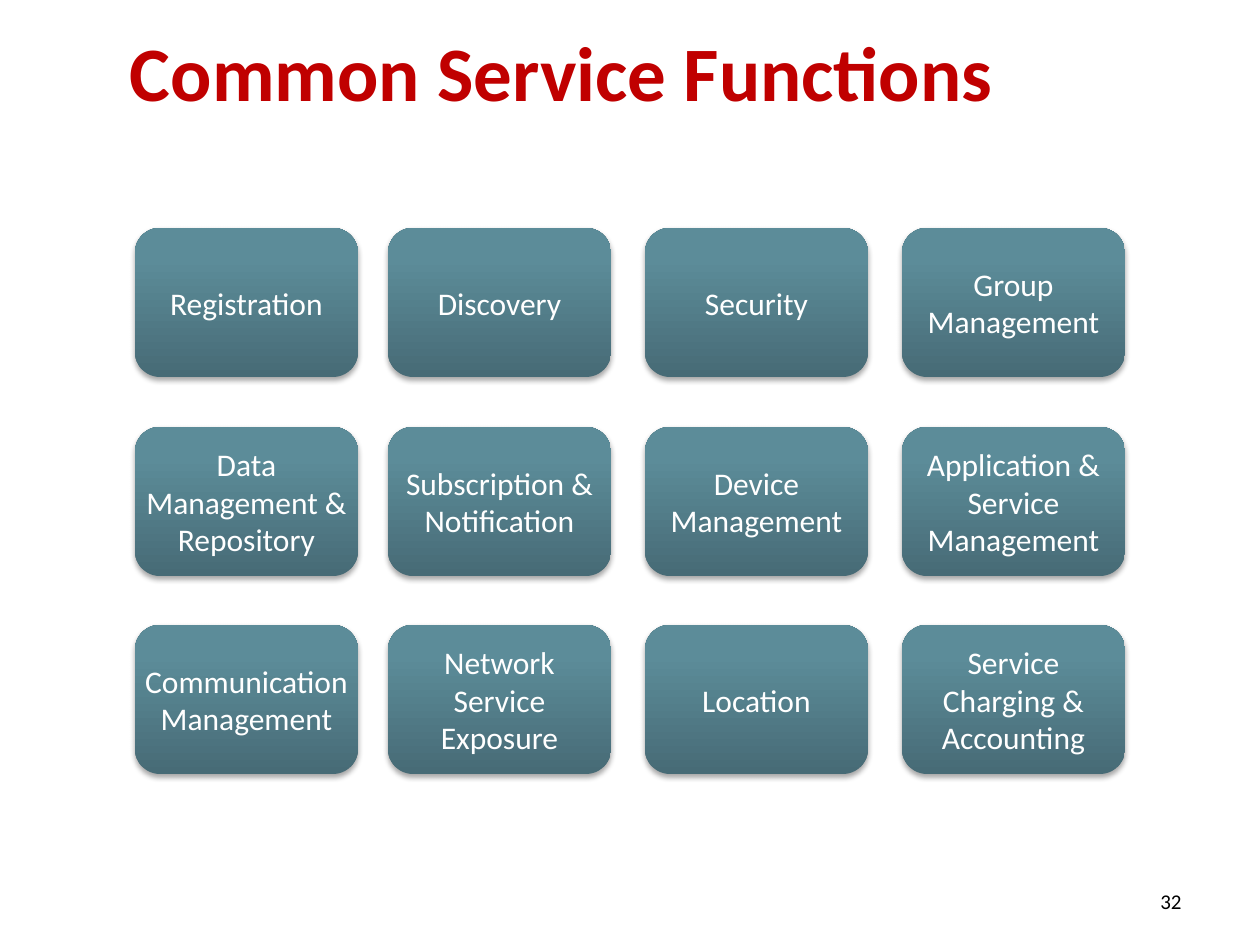
from dataclasses import dataclass

import pptx
import pptx.dml.color
import pptx.enum.shapes
import pptx.enum.text
import pptx.oxml
import pptx.oxml.ns
import pptx.util

EMU_PER_PX = 914400 / 126
ALIGN = pptx.enum.text.PP_ALIGN
ANCHOR = pptx.enum.text.MSO_ANCHOR
DRAWING_NS = pptx.oxml.ns.nsdecls("a")


@dataclass(frozen=True)
class Theme:
    font: str = "Calibri"
    heading: str = "C00000"
    tile_text: str = "FFFFFF"
    number: str = "000000"
    shadow: str = "000000"
    tile_stops: tuple = ((0, "476B76"), (80, "5C8C99"), (100, "5B8D9B"))
    heading_size: int = 44
    tile_size: int = 18
    number_size: int = 12


def px(length):
    return pptx.util.Emu(round(length * EMU_PER_PX))


class Deck:
    def __init__(self, theme, width, height):
        self.theme = theme
        self.presentation = pptx.Presentation()
        self.presentation.slide_width = px(width)
        self.presentation.slide_height = px(height)
        self.slide = None

    def new_slide(self):
        blank = self.presentation.slide_layouts[6]
        self.slide = self.presentation.slides.add_slide(blank)

    def set_text(self, frame, text, size, color, align, bold=False):
        frame.text = text
        paragraph = frame.paragraphs[0]
        paragraph.alignment = align
        font = paragraph.font
        font.name = self.theme.font
        font.size = pptx.util.Pt(size)
        font.bold = bold
        font.color.rgb = pptx.dml.color.RGBColor.from_string(color)

    def text(self, box, text, size, color, align, wrap=True, anchor=ANCHOR.TOP, bold=False):
        frame = self.slide.shapes.add_textbox(*map(px, box)).text_frame
        frame.word_wrap = wrap
        frame.vertical_anchor = anchor
        self.set_text(frame, text, size, color, align, bold)

    def tile(self, box, label):
        """Add a rounded box with a vertical gradient and a soft shadow below."""
        shape = self.slide.shapes.add_shape(
            pptx.enum.shapes.MSO_SHAPE.ROUNDED_RECTANGLE, *map(px, box))
        self.shade(shape)
        frame = shape.text_frame
        frame.word_wrap = True
        frame.vertical_anchor = ANCHOR.MIDDLE
        frame.margin_left = frame.margin_right = 0
        self.set_text(frame, label, self.theme.tile_size, self.theme.tile_text, ALIGN.CENTER)

    def shade(self, shape):
        stops = "".join(
            f'<a:gs pos="{percent * 1000}"><a:srgbClr val="{color}"/></a:gs>'
            for percent, color in self.theme.tile_stops)
        properties = shape.element.spPr
        properties.append(pptx.oxml.parse_xml(
            f'<a:gradFill {DRAWING_NS} rotWithShape="1"><a:gsLst>{stops}</a:gsLst>'
            '<a:lin ang="16200000" scaled="0"/></a:gradFill>'))
        shape.line.fill.background()
        shape.shadow.inherit = False
        effects = properties.find(pptx.oxml.ns.qn("a:effectLst"))
        effects.append(pptx.oxml.parse_xml(
            f'<a:outerShdw {DRAWING_NS} blurRad="{pptx.util.Pt(3.1)}" '
            f'dist="{pptx.util.Pt(1.8)}" dir="5400000" rotWithShape="0">'
            f'<a:srgbClr val="{self.theme.shadow}"><a:alpha val="35000"/></a:srgbClr>'
            '</a:outerShdw>'))


FUNCTIONS = (
    ("Registration", "Discovery", "Security", "Group Management"),
    ("Data Management & Repository", "Subscription & Notification",
     "Device Management", "Application & Service Management"),
    ("Communication Management", "Network Service Exposure",
     "Location", "Service Charging & Accounting"),
)
COLUMN_LEFTS = (135, 388, 645, 902)
ROW_TOPS = (228, 427, 625)
TILE_WIDTH, TILE_HEIGHT = 223, 149


def main():
    theme = Theme()
    deck = Deck(theme, 1260, 945)
    deck.new_slide()
    deck.text((1144, 882, 50, 38), "32", theme.number_size, theme.number,
              ALIGN.RIGHT, wrap=False)
    for top, labels in zip(ROW_TOPS, FUNCTIONS):
        for left, label in zip(COLUMN_LEFTS, labels):
            deck.tile((left, top, TILE_WIDTH, TILE_HEIGHT), label)
    # The heading ends in a line break, which lifts it above the box centre.
    deck.text((63, 38, 998, 157), "Common Service Functions\v", theme.heading_size,
              theme.heading, ALIGN.CENTER, anchor=ANCHOR.MIDDLE, bold=True)
    deck.presentation.save("out.pptx")


if __name__ == "__main__":
    main()
